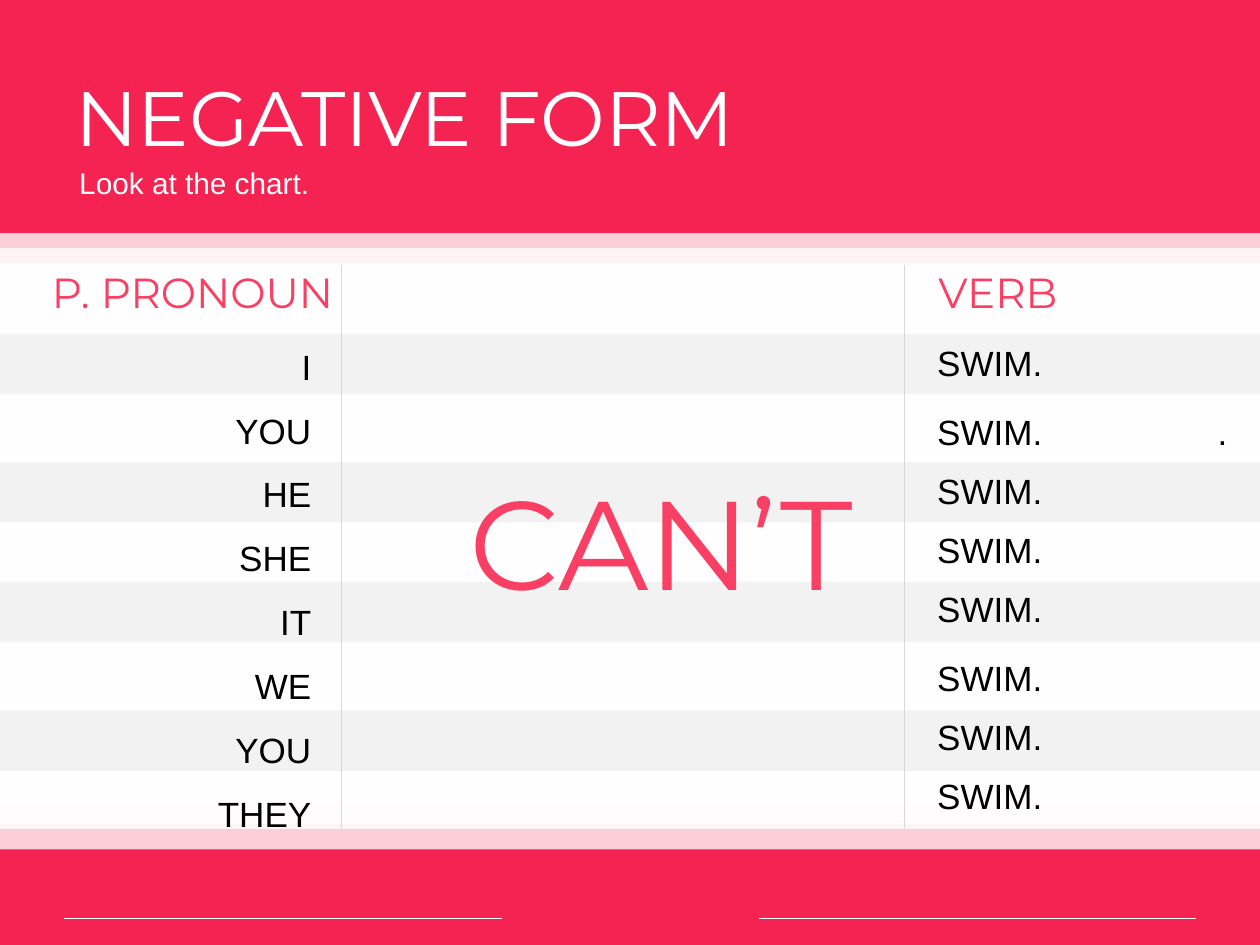
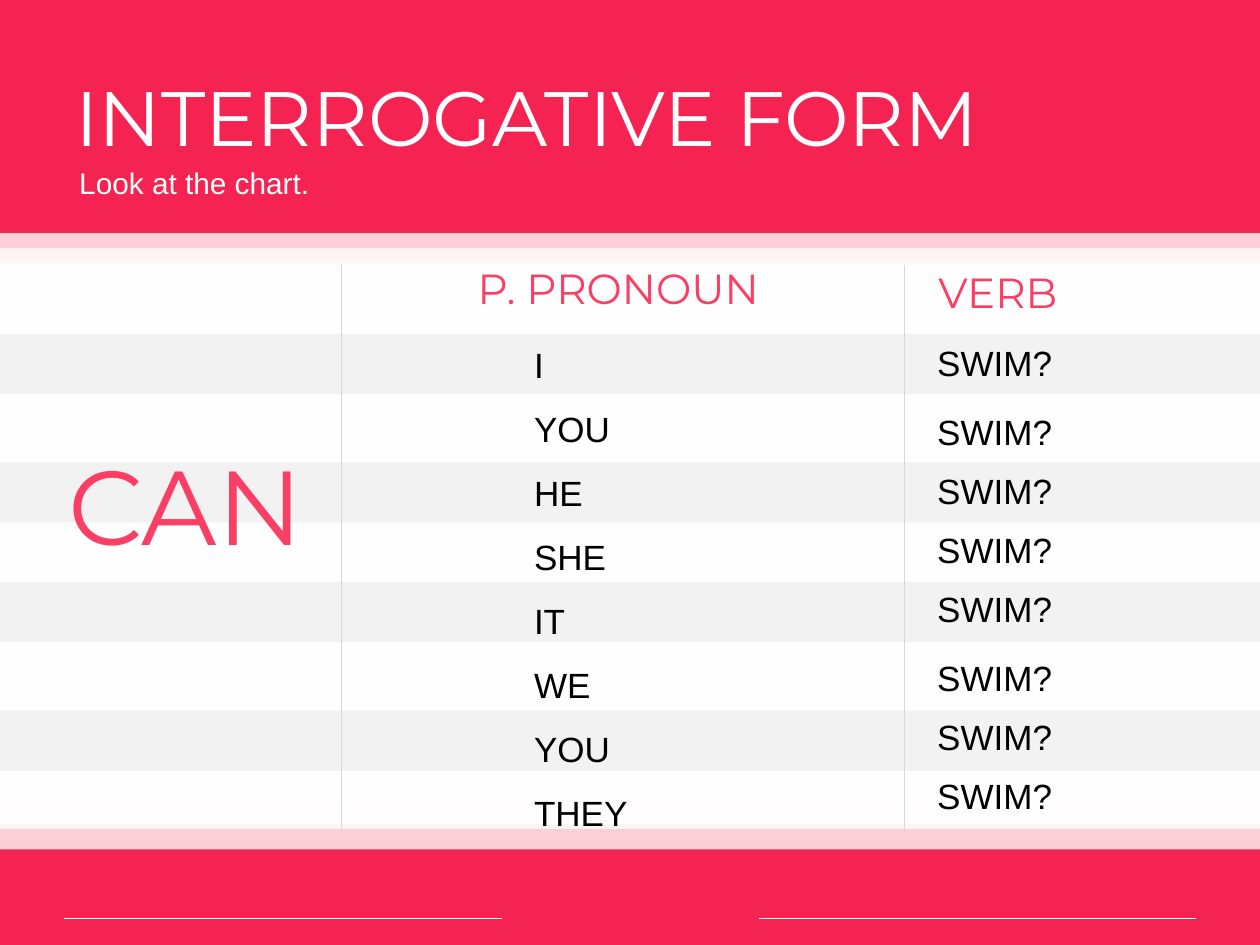
from dataclasses import dataclass

from lxml import etree
from pptx import Presentation
from pptx import util as u
from pptx.dml.color import RGBColor
from pptx.enum import shapes, text
from pptx.oxml import ns

Pt = u.Pt
WIDTH, HEIGHT = 720, 540
COLORS = {
    "red": "F52351",
    "pink": "F93F63",
    "white": "FFFFFF",
    "stripe": "F2F2F2",
    "rule": "D9D9D9",
    "black": "000000",
}
HEADING, BODY = "Montserrat", "Arial"
LEFT, RIGHT = text.PP_ALIGN.LEFT, text.PP_ALIGN.RIGHT
TOP, MIDDLE = text.MSO_ANCHOR.TOP, text.MSO_ANCHOR.MIDDLE

PRONOUNS = ["I", "YOU", "HE", "SHE", "IT", "WE", "YOU", "THEY"]
# (top, height) of the translucent white layers that soften the panel edges
PANEL_LAYERS = [
    (150.5, 51), (141.8, 51), (133.2, 36.7),
    (212.4, 258.5), (151.2, 295.2), (181.4, 243.4),
    (419.8, 65.5), (408.2, 65.5), (158.4, 301),
]
PANEL_OPACITY = 78
STRIPE_TOPS = [190.8, 264.2, 332.6, 406.1]
STRIPE_HEIGHT = 34.4
COLUMN_RULES = [195.1, 517]
FOOTER_RULES = [(36.7, 286.6), (433.8, 683.3)]
VERB_LEFT, VERB_TOP, VERB_STEP, VERB_GAP = 528.5, 191.5, 33.8, 5.4


@dataclass(frozen=True)
class Box:
    left: float
    top: float
    width: float
    height: float


@dataclass(frozen=True)
class Style:
    font: str
    size: float
    color: str
    align: text.PP_ALIGN = LEFT
    anchor: text.MSO_ANCHOR = MIDDLE
    line_spacing: float = 1.0
    space_before: float = 0


@dataclass(frozen=True)
class Label:
    lines: list[str]
    box: Box
    style: Style


@dataclass(frozen=True)
class FormSlide:
    title: str
    verb: str
    labels: list[Label]


TITLE = Style(HEADING, 44, "white")
SUBTITLE = Style(BODY, 17, "white")
COLUMN_HEAD = Style(HEADING, 24, "pink")
COLUMN_HEAD_RIGHT = Style(HEADING, 24, "pink", RIGHT)
CELL = Style(BODY, 20, "black")
CELL_RIGHT = Style(BODY, 20, "black", RIGHT)


def pronoun_style(align: text.PP_ALIGN) -> Style:
    return Style(BODY, 20, "black", align, TOP, 1.3, 5.3)


def modal_style(size: float) -> Style:
    return Style(HEADING, size, "pink", RIGHT)


def verb_box(row: int) -> Box:
    """Rows are evenly spaced, with a wider gap before rows 1 and 5."""
    top = VERB_TOP + row * VERB_STEP + (row + 3) // 4 * VERB_GAP
    return Box(VERB_LEFT, top, 180, 31.7)


FORMS = [
    FormSlide("NEGATIVE FORM", "SWIM.", [
        Label(["P. PRONOUN"], Box(15.1, 148.3, 182.2, 36.7), COLUMN_HEAD_RIGHT),
        Label(PRONOUNS, Box(14.4, 186.5, 170.6, 293), pronoun_style(RIGHT)),
        Label(["CAN’T"], Box(208.1, 261.4, 286.6, 94.3), modal_style(72)),
        Label(["."], verb_box(1), CELL_RIGHT),
    ]),
    FormSlide("INTERROGATIVE FORM", "SWIM?", [
        Label(["P. PRONOUN"], Box(253.4, 146.2, 187.2, 36.7), COLUMN_HEAD_RIGHT),
        Label(PRONOUNS, Box(298.1, 185.8, 170.6, 293), pronoun_style(LEFT)),
        Label(["CAN"], Box(11.5, 247.7, 168.5, 79.9), modal_style(60)),
    ]),
]


def rgb(name: str) -> RGBColor:
    return RGBColor.from_string(COLORS[name])


def add_band(s, top: float, height: float, color: str, opacity: int = 100) -> None:
    """Draw a borderless strip across the whole slide."""
    sp = s.shapes.add_shape(shapes.MSO_SHAPE.RECTANGLE, 0, Pt(top), Pt(WIDTH), Pt(height))
    sp.shadow.inherit = False
    sp.fill.solid()
    sp.fill.fore_color.rgb = rgb(color)
    sp.line.fill.background()
    if opacity < 100:
        clr = sp._element.spPr.find(".//" + ns.qn("a:srgbClr"))
        etree.SubElement(clr, ns.qn("a:alpha")).set("val", str(opacity * 1000))


def add_rule(s, x1: float, y1: float, x2: float, y2: float, color: str, width: float) -> None:
    line = s.shapes.add_connector(
        shapes.MSO_CONNECTOR.STRAIGHT, Pt(x1), Pt(y1), Pt(x2), Pt(y2))
    line.line.color.rgb = rgb(color)
    line.line.width = Pt(width)
    etree.SubElement(line._element.spPr, ns.qn("a:effectLst"))


def add_label(s, label: Label) -> None:
    box, style = label.box, label.style
    sp = s.shapes.add_textbox(Pt(box.left), Pt(box.top), Pt(box.width), Pt(box.height))
    tf = sp.text_frame
    tf.word_wrap = True
    tf.vertical_anchor = style.anchor
    for i, line in enumerate(label.lines):
        p = tf.add_paragraph() if i else tf.paragraphs[0]
        p.text = line
        p.alignment = style.align
        p.line_spacing = style.line_spacing
        p.space_before = Pt(style.space_before if i else 0)
        p.font.name = style.font
        p.font.size = Pt(style.size)
        p.font.color.rgb = rgb(style.color)


def add_frame(s) -> None:
    """Draw the red ground, the white panel and the footer rules."""
    add_band(s, 0, HEIGHT, "red")
    for x1, x2 in FOOTER_RULES:
        add_rule(s, x1, 525, x2, 525, "white", 0.25)
    for top, height in PANEL_LAYERS:
        add_band(s, top, height, "white", PANEL_OPACITY)


def add_chart_grid(s) -> None:
    for top in STRIPE_TOPS:
        add_band(s, top, STRIPE_HEIGHT, "stripe")
    for x in COLUMN_RULES:
        add_rule(s, x, 151.2, x, 474.3, "rule", 0.75)


def add_form_slide(prs, form: FormSlide) -> None:
    s = prs.slides.add_slide(prs.slide_layouts[6])
    add_frame(s)
    add_label(s, Label([form.title], Box(36, 15.1, 648, 102.2), TITLE))
    add_label(s, Label(["Look at the chart."], Box(38.2, 85, 648, 38.2), SUBTITLE))
    add_chart_grid(s)
    add_label(s, Label(["VERB"], Box(529.2, 148.3, 180, 36.7), COLUMN_HEAD))
    for label in form.labels:
        add_label(s, label)
    for row in range(len(PRONOUNS)):
        add_label(s, Label([form.verb], verb_box(row), CELL))


def main() -> None:
    prs = Presentation()
    prs.slide_width, prs.slide_height = Pt(WIDTH), Pt(HEIGHT)
    for form in FORMS:
        add_form_slide(prs, form)
    prs.save("out.pptx")


if __name__ == "__main__":
    main()
